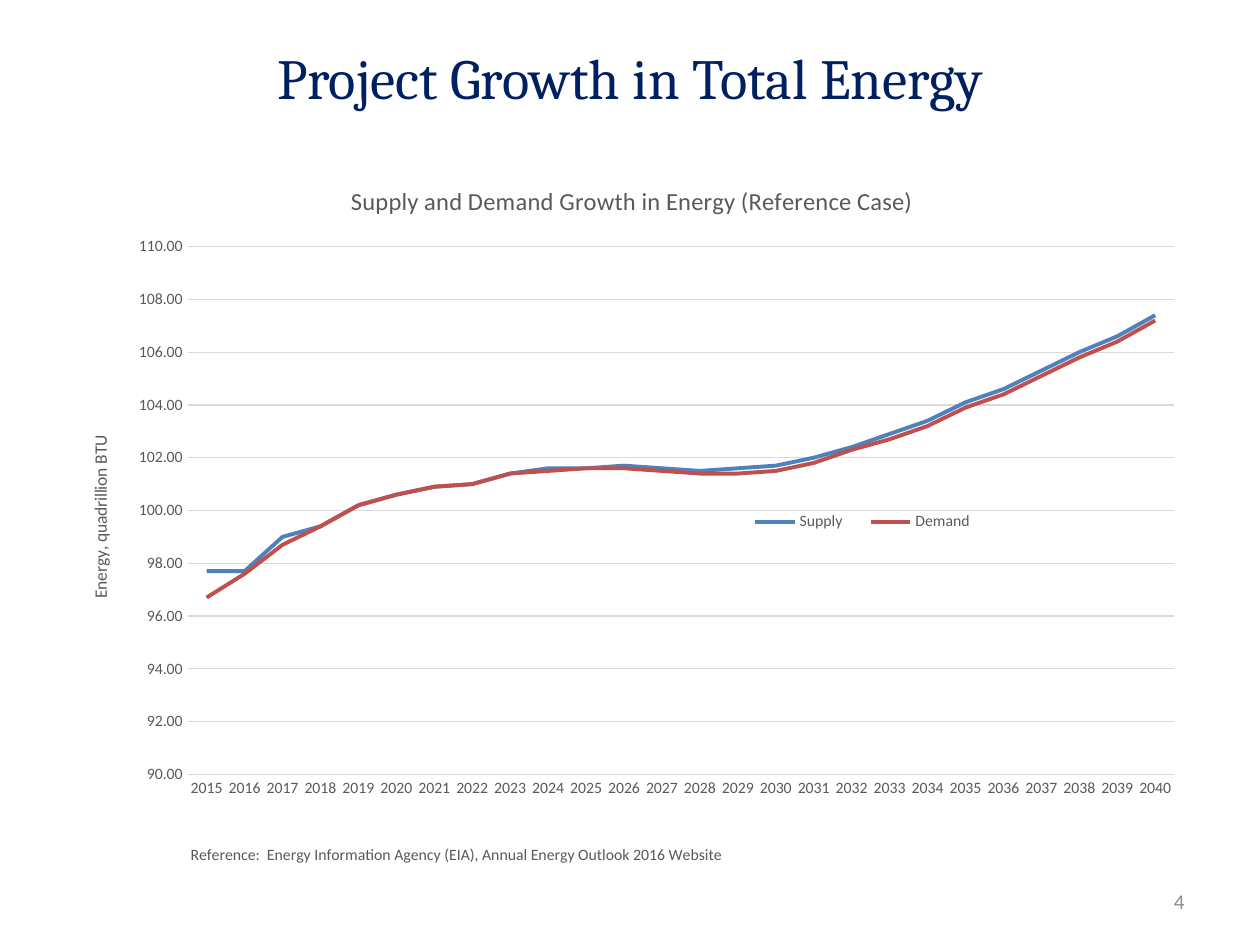
import pptx
import pptx.chart.data
import pptx.dml.color
import pptx.enum.chart
import pptx.enum.text
import pptx.oxml
import pptx.oxml.ns
import pptx.util

Pt = pptx.util.Pt
RGB = pptx.dml.color.RGBColor
qn = pptx.oxml.ns.qn
Align = pptx.enum.text.PP_ALIGN
NAVY = RGB(0x00, 0x20, 0x60)
GRAY = RGB(0x59, 0x59, 0x59)
PALE = RGB(0x8C, 0x8C, 0x8C)
GRID = RGB(0xD9, 0xD9, 0xD9)
BLUE = RGB(0x4F, 0x81, 0xBD)
RED = RGB(0xC0, 0x50, 0x4D)


def write(frame, text, size, color=GRAY, font="Calibri", align=Align.CENTER):
    para = frame.paragraphs[0]
    para.alignment = align
    run = para.add_run()
    run.text = text
    run.font.size = Pt(size)
    run.font.name = font
    run.font.bold = False
    run.font.color.rgb = color


def place(part, **spots):
    for old in part.findall(qn("c:layout")):
        part.remove(old)
    layout = pptx.oxml.parse_xml(f'<c:layout {pptx.oxml.ns.nsdecls("c")}/>')
    manual = layout.makeelement(qn("c:manualLayout"))
    layout.append(manual)
    if "target" in spots:
        manual.append(manual.makeelement(qn("c:layoutTarget"), val=spots.pop("target")))
    for key in ("x", "y"):
        manual.append(manual.makeelement(qn(f"c:{key}Mode"), val="edge"))
    for key, value in spots.items():
        manual.append(manual.makeelement(qn(f"c:{key}"), val=str(value)))
    over = part.find(qn("c:overlay"))
    if over is None:
        part.insert(0, layout)
    else:
        over.addprevious(layout)


deck = pptx.Presentation()
deck.slide_width, deck.slide_height = Pt(720), Pt(540)
slide = deck.slides.add_slide(deck.slide_layouts[6])

for text, box, style in (
    ("Project Growth in Total Energy", (36, 21.6, 648, 44.64),
     dict(size=32.4, color=NAVY, font="Cambria")),
    ("4", (516.24, 500.4, 167.76, 28.8),
     dict(size=12, color=PALE, align=Align.RIGHT)),
):
    frame = slide.shapes.add_textbox(*map(Pt, box)).text_frame
    frame.word_wrap = True
    frame.vertical_anchor = pptx.enum.text.MSO_ANCHOR.MIDDLE
    write(frame, text, **style)

data = pptx.chart.data.CategoryChartData(number_format="#,##0.00")
data.categories = [str(year) for year in range(2015, 2041)]
data.add_series("Supply", (
    97.7, 97.7, 99, 99.4, 100.2, 100.6, 100.9, 101, 101.4,
    101.6, 101.6, 101.7, 101.6, 101.5, 101.6, 101.7, 102, 102.4,
    102.9, 103.4, 104.1, 104.6, 105.3, 106, 106.6, 107.4))
data.add_series("Demand", (
    96.7, 97.6, 98.7, 99.4, 100.2, 100.6, 100.9, 101, 101.4,
    101.5, 101.6, 101.6, 101.5, 101.4, 101.4, 101.5, 101.8, 102.3,
    102.7, 103.2, 103.9, 104.4, 105.1, 105.8, 106.4, 107.2))
chart = slide.shapes.add_chart(
    pptx.enum.chart.XL_CHART_TYPE.LINE, Pt(36), Pt(90), Pt(648), Pt(424.8), data).chart
chart.font.size = Pt(10)
chart.font.name = "Calibri"
plot = chart.plots[0]
plot.vary_by_categories = False
for series, color in zip(plot.series, (BLUE, RED)):
    series.smooth = False
    series.marker.style = pptx.enum.chart.XL_MARKER_STYLE.NONE
    series.format.line.color.rgb = color
    series.format.line.width = Pt(2.25)

years, energy = chart.category_axis, chart.value_axis
for axis in (years, energy):
    axis.major_tick_mark = axis.minor_tick_mark = pptx.enum.chart.XL_TICK_MARK.NONE
    axis.tick_labels.font.size = Pt(9)
    axis.tick_labels.font.name = "Calibri"
    axis.tick_labels.font.color.rgb = GRAY
energy.minimum_scale, energy.maximum_scale, energy.major_unit = 90, 110, 2
energy.tick_labels.number_format = "#,##0.00"
energy.tick_labels.number_format_is_linked = False
energy.format.line.fill.background()
for line in (years.format.line, energy.major_gridlines.format.line):
    line.color.rgb = GRID
    line.width = Pt(0.75)

chart.has_title = True
for title, text, size, x, y in (
    (chart.chart_title, "Supply and Demand Growth in Energy (Reference Case)", 14, 0.25, 0.03),
    (years.axis_title, "Reference:  Energy Information Agency (EIA), Annual Energy Outlook 2016 Website",
     9, 0.11, 0.92),
    (energy.axis_title, "Energy, quadrillion BTU", 10, 0.02, 0.37),
):
    write(title.text_frame, text, size)
    place(title._element, x=x, y=y)
turn = next(energy.axis_title._element.iter(qn("a:bodyPr")))
turn.set("rot", "-5400000")
turn.set("vert", "horz")

chart.has_legend = True
legend = chart.legend
legend.position = pptx.enum.chart.XL_LEGEND_POSITION.BOTTOM
legend.include_in_layout = False
legend.font.size = Pt(9)
legend.font.name = "Calibri"
legend.font.color.rgb = GRAY
place(legend._element, x=0.59, y=0.47, w=0.23, h=0.04)
place(next(chart._chartSpace.iter(qn("c:plotArea"))),
      target="inner", x=0.11, y=0.12, w=0.87, h=0.71)

deck.save("out.pptx")
